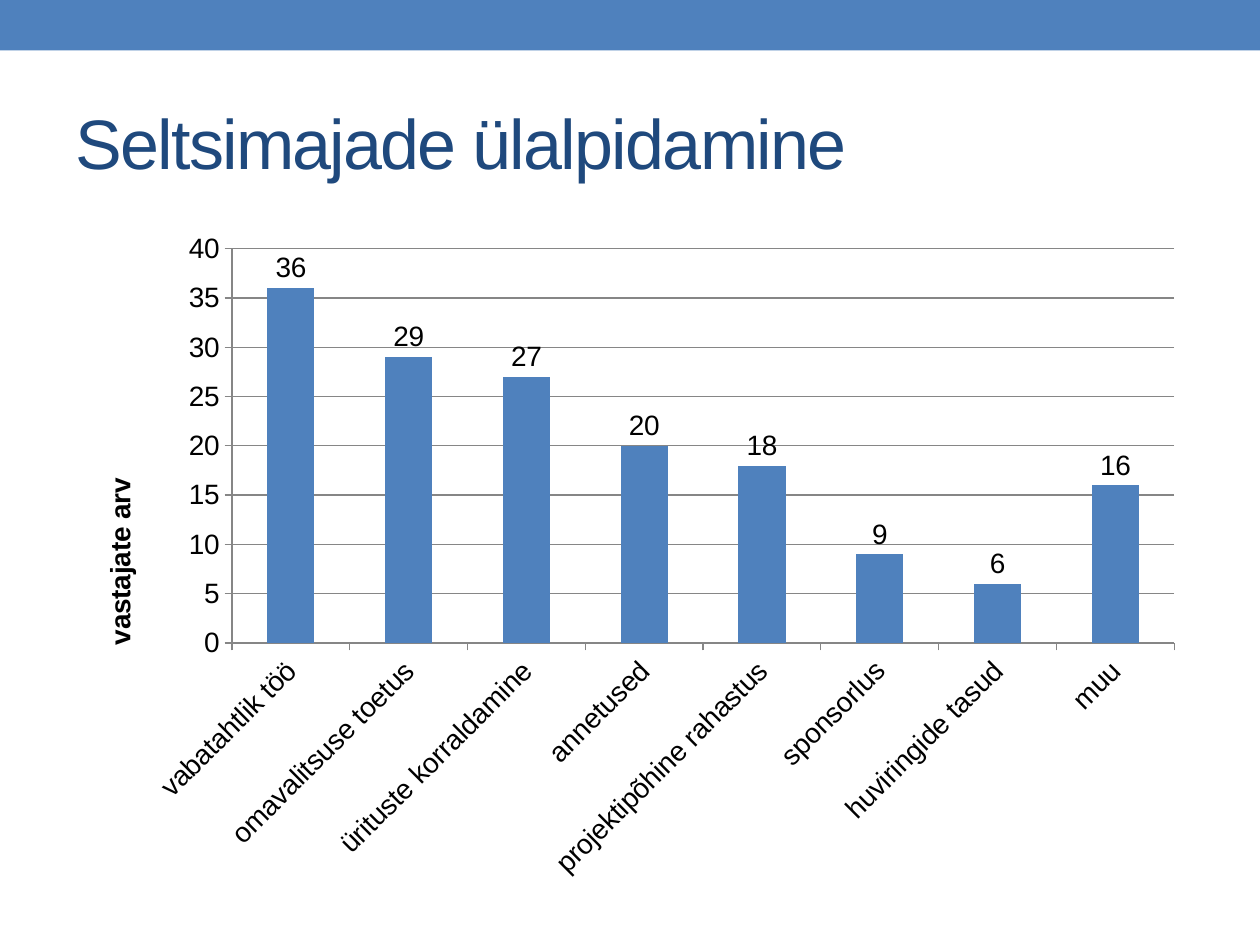
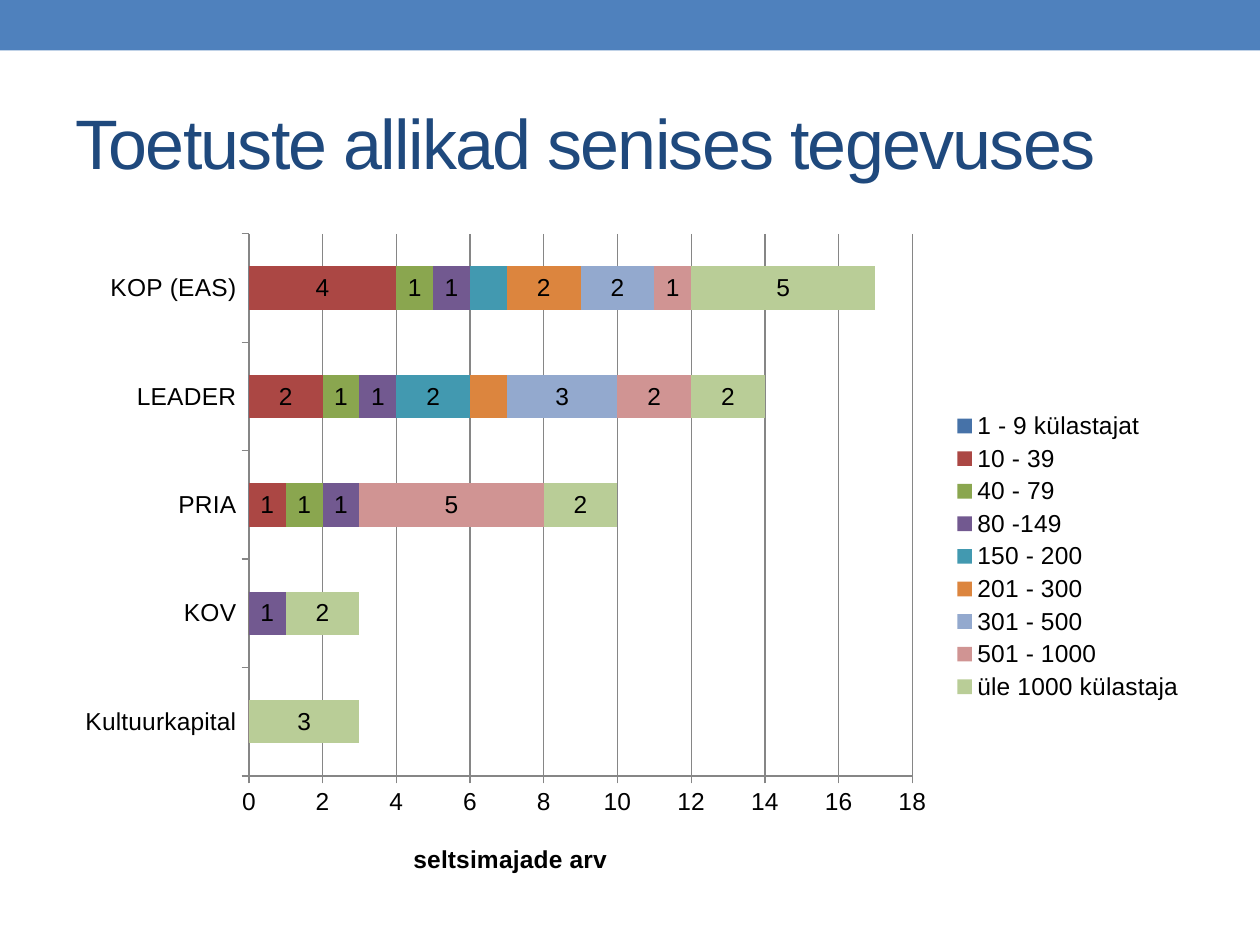
"""Build two slides on how community houses are funded."""
from dataclasses import dataclass

from lxml.etree import SubElement
from pptx import Presentation
from pptx.chart.chart import Chart
from pptx.chart.data import CategoryChartData
from pptx.dml.color import RGBColor
from pptx.dml.fill import FillFormat
from pptx.enum.chart import XL_CHART_TYPE as ChartType
from pptx.enum.chart import XL_LABEL_POSITION as LabelPosition
from pptx.enum.chart import XL_LEGEND_POSITION as LegendPosition
from pptx.enum.chart import XL_TICK_MARK as TickMark
from pptx.enum.shapes import MSO_SHAPE as Preset
from pptx.enum.text import MSO_ANCHOR as Anchor
from pptx.enum.text import MSO_AUTO_SIZE as AutoSize
from pptx.enum.text import PP_ALIGN as Align
from pptx.oxml.ns import qn
from pptx.slide import Slide
from pptx.util import Inches, Pt

WIDTH, HEIGHT = Inches(10), Inches(7.5)
FONT = "Arial"
BLUE, NAVY, BLACK, GRID = "4F81BD", "1F497D", "000000", "868686"
TITLE_ONLY = 5


@dataclass(frozen=True)
class Area:
    """A rectangle in shares of its container."""

    left: float
    top: float
    width: float
    height: float

    def on_slide(self) -> tuple[int, int, int, int]:
        """Return the rectangle in slide units."""
        return (int(self.left * WIDTH), int(self.top * HEIGHT),
                int(self.width * WIDTH), int(self.height * HEIGHT))


BAND = Area(0, 0, 1, 0.0533)
TITLE = Area(0.05, 0.0778, 0.9, 0.1444)
BODY = Area(0.05, 0.2333, 0.9, 0.7111)


@dataclass(frozen=True)
class Series:
    """One data series, with the points whose value is not shown."""

    name: str
    color: str
    values: tuple[int, ...]
    unlabelled: tuple[int, ...] = ()


@dataclass(frozen=True)
class ChartPage:
    """A titled slide with one bar chart."""

    title: str
    kind: ChartType
    size: int
    categories: tuple[str, ...]
    series: tuple[Series, ...]
    axis_title: str
    title_turn: int
    title_corner: tuple[float, float]
    plot_area: Area
    maximum: int
    step: int
    value_format: str = "General"
    label_turn: int = 0
    stacked: bool = False


PAGES = (
    ChartPage(
        title="Seltsimajade ülalpidamine",
        kind=ChartType.COLUMN_CLUSTERED,
        size=16,
        categories=("vabatahtlik töö", "omavalitsuse toetus", "ürituste korraldamine", "annetused",
                    "projektipõhine rahastus", "sponsorlus", "huviringide tasud", "muu"),
        series=(Series("Series 1", BLUE, (36, 29, 27, 20, 18, 9, 6, 16)),),
        axis_title="vastajate arv",
        title_turn=-90,
        title_corner=(0.03, 0.376),
        plot_area=Area(0.149, 0.042, 0.831, 0.587),
        maximum=40,
        step=5,
        value_format="###0",
        label_turn=-45,
    ),
    ChartPage(
        title="Toetuste allikad senises tegevuses",
        kind=ChartType.BAR_STACKED,
        size=14,
        categories=("Kultuurkapital", "KOV", "PRIA", "LEADER", "KOP (EAS)"),
        series=(
            Series("1 - 9 külastajat", "4672A8", (0, 0, 0, 0, 0)),
            Series("10 - 39", "AB4744", (0, 0, 1, 2, 4)),
            Series("40 - 79", "8AA64F", (0, 0, 1, 1, 1)),
            Series("80 -149", "725990", (0, 1, 1, 1, 1)),
            Series("150 - 200", "4299B0", (0, 0, 0, 2, 1), unlabelled=(4,)),
            Series("201 - 300", "DC853E", (0, 0, 0, 1, 2), unlabelled=(3,)),
            Series("301 - 500", "93A9CE", (0, 0, 0, 3, 2)),
            Series("501 - 1000", "D09493", (0, 0, 5, 2, 1)),
            Series("üle 1000 külastaja", "B9CD97", (3, 2, 2, 2, 5)),
        ),
        axis_title="seltsimajade arv",
        title_turn=0,
        title_corner=(0.305, 0.92),
        plot_area=Area(0.164, 0.02, 0.585, 0.807),
        maximum=18,
        step=2,
        stacked=True,
    ),
)


def paint(fill: FillFormat, color: str) -> None:
    """Fill with one solid colour."""
    fill.solid()
    fill.fore_color.rgb = RGBColor.from_string(color)


def style_font(font, size: int, color: str, bold: bool = False) -> None:
    """Set the shared typeface with a size and colour."""
    font.name, font.size, font.bold = FONT, Pt(size), bold
    font.color.rgb = RGBColor.from_string(color)


def add_band(page: Slide) -> None:
    """Draw the blue band along the top."""
    band = page.shapes.add_shape(Preset.RECTANGLE, *BAND.on_slide())
    band.shadow.inherit = False
    paint(band.fill, BLUE)
    band.line.fill.background()


def set_title(page: Slide, text: str) -> None:
    """Place and format the title placeholder."""
    box = page.shapes.title
    box.left, box.top, box.width, box.height = TITLE.on_slide()
    frame = box.text_frame
    frame.text = text
    frame.auto_size = AutoSize.NONE
    frame.vertical_anchor = Anchor.MIDDLE
    para = frame.paragraphs[0]
    para.alignment = Align.LEFT
    style_font(para.font, 40, NAVY)
    for span in para.runs:
        span.font._element.set("spc", "-100")


def set_layout(parent, index: int, settings: dict[str, str | float]) -> None:
    """Give a chart part a manual layout."""
    for old in parent.findall(qn("c:layout")):
        parent.remove(old)
    layout = parent.makeelement(qn("c:layout"))
    parent.insert(index, layout)
    manual = SubElement(layout, qn("c:manualLayout"))
    for name, value in settings.items():
        SubElement(manual, qn(f"c:{name}")).set("val", str(value))


def turn_text(body, degrees: int) -> None:
    """Rotate the text of a chart part."""
    body.set("rot", str(degrees * 60000))
    body.set("vert", "horz")


def format_axes(chart: Chart, spec_page: ChartPage) -> None:
    """Format both axes, the gridlines and the value axis title."""
    values, categories = chart.value_axis, chart.category_axis
    for axis in (values, categories):
        axis.major_tick_mark, axis.minor_tick_mark = TickMark.OUTSIDE, TickMark.NONE
        style_font(axis.tick_labels.font, spec_page.size, BLACK)
    values.minimum_scale, values.maximum_scale = 0, spec_page.maximum
    values.major_unit = spec_page.step
    values.has_major_gridlines = True
    values.tick_labels.number_format = spec_page.value_format
    values.tick_labels.number_format_is_linked = False
    for line in (values.format.line, categories.format.line, values.major_gridlines.format.line):
        paint(line.fill, GRID)
        line.width = Pt(0.75)

    frame = values.axis_title.text_frame
    frame.text = spec_page.axis_title
    style_font(frame.paragraphs[0].font, spec_page.size, BLACK, bold=True)
    root = chart._chartSpace
    title = root.xpath(".//c:valAx/c:title")[0]
    turn_text(title.xpath(".//a:bodyPr")[0], spec_page.title_turn)
    left, top = spec_page.title_corner
    set_layout(title, 1, {"xMode": "edge", "yMode": "edge", "x": left, "y": top})
    turn_text(root.xpath(".//c:catAx/c:txPr/a:bodyPr")[0], spec_page.label_turn)

    area = spec_page.plot_area
    set_layout(root.xpath(".//c:plotArea")[0], 0, {
        "layoutTarget": "inner", "xMode": "edge", "yMode": "edge",
        "x": area.left, "y": area.top, "w": area.width, "h": area.height})


def format_series(chart: Chart, spec_page: ChartPage) -> None:
    """Colour the bars and label the values above zero."""
    position = LabelPosition.CENTER if spec_page.stacked else LabelPosition.OUTSIDE_END
    for bars, series in zip(chart.plots[0].series, spec_page.series):
        paint(bars.format.fill, series.color)
        bars.invert_if_negative = False
        bars.data_labels.show_value = False
        for index, value in enumerate(series.values):
            if value and index not in series.unlabelled:
                label = bars.points[index].data_label
                style_font(label.font, spec_page.size, BLACK)
                label.position = position


def add_bar_chart(page: Slide, spec_page: ChartPage) -> None:
    """Add the bar chart of a page."""
    data = CategoryChartData(number_format=spec_page.value_format)
    data.categories = spec_page.categories
    for series in spec_page.series:
        data.add_series(series.name, series.values)
    chart = page.shapes.add_chart(spec_page.kind, *BODY.on_slide(), data).chart
    style_font(chart.font, spec_page.size, BLACK)
    chart.has_title = False
    chart.has_legend = spec_page.stacked
    if spec_page.stacked:
        chart.legend.position = LegendPosition.RIGHT
        chart.legend.include_in_layout = False
        style_font(chart.legend.font, spec_page.size, BLACK)
    plot = chart.plots[0]
    plot.vary_by_categories = False
    plot.gap_width = 150
    plot.overlap = 100 if spec_page.stacked else 0
    format_axes(chart, spec_page)
    format_series(chart, spec_page)


def main() -> None:
    """Build and save the deck."""
    deck = Presentation()
    deck.slide_width, deck.slide_height = WIDTH, HEIGHT
    for spec_page in PAGES:
        page = deck.slides.add_slide(deck.slide_layouts[TITLE_ONLY])
        add_band(page)
        set_title(page, spec_page.title)
        add_bar_chart(page, spec_page)
    deck.save("out.pptx")


if __name__ == "__main__":
    main()
